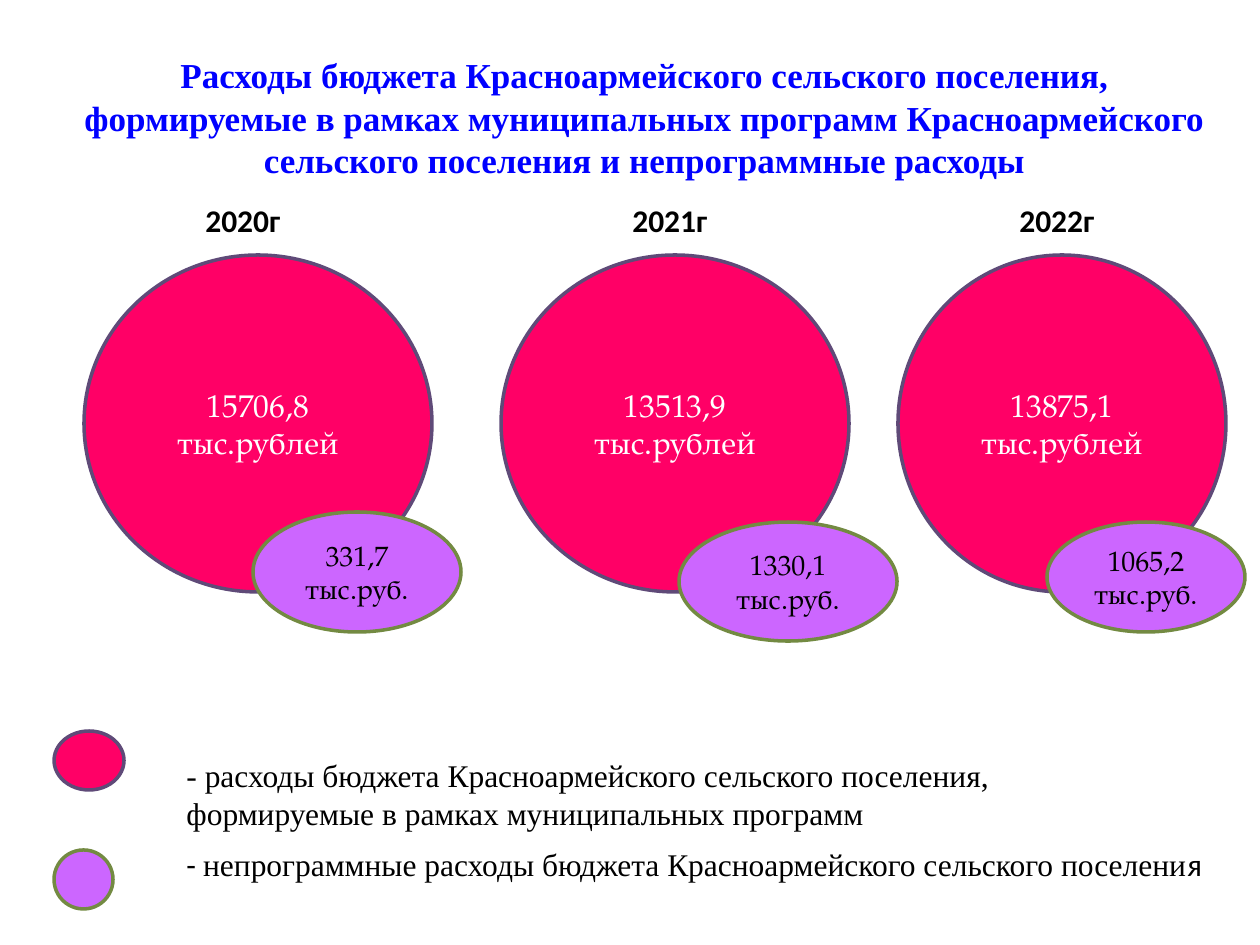
import pptx
import pptx.util
import pptx.dml.color
import pptx.enum.shapes
import pptx.enum.text

RGBColor = pptx.dml.color.RGBColor
ALIGN = pptx.enum.text.PP_ALIGN
MIDDLE = pptx.enum.text.MSO_ANCHOR.MIDDLE
PINK = RGBColor(0xFF, 0x00, 0x66)
PLUM = RGBColor(0x5F, 0x4A, 0x78)
VIOLET = RGBColor(0xCC, 0x66, 0xFF)
OLIVE = RGBColor(0x73, 0x8A, 0x42)
BLUE = RGBColor(0x00, 0x00, 0xFF)
WHITE = RGBColor(0xFF, 0xFF, 0xFF)
BLACK = RGBColor(0x00, 0x00, 0x00)
SERIF, SANS, PAGELLA = "Times New Roman", "Calibri", "TeX Gyre Pagella"
PROGRAM, OTHER = (PINK, PLUM), (VIOLET, OLIVE)


def emu(*px):
    """Turn px lengths into EMU at 126 px to the inch."""
    return [pptx.util.Emu(round(v * 914400 / 126)) for v in px]


def style(p, name, size, color, bold=False, align=None):
    """Set the font and alignment of a paragraph."""
    p.font.name, p.font.size, p.font.bold = name, pptx.util.Pt(size), bold
    p.font.color.rgb = color
    p.alignment = align


def add_ellipse(s, box, colors, text="", size=18, color=WHITE):
    """Draw an outlined ellipse with optional centred text."""
    sp = s.shapes.add_shape(pptx.enum.shapes.MSO_SHAPE.OVAL, *emu(*box))
    sp.shadow.inherit = False
    sp.fill.solid()
    sp.fill.fore_color.rgb, sp.line.color.rgb = colors
    sp.line.width = pptx.util.Pt(2)
    if text:
        tf = sp.text_frame
        tf.text = text
        tf.vertical_anchor = MIDDLE
        style(tf.paragraphs[0], PAGELLA, size, color, align=ALIGN.CENTER)


def add_label(s, box, text, name, bold=False):
    """Place a wrapped black text box and return its paragraph."""
    tf = s.shapes.add_textbox(*emu(*box)).text_frame
    tf.word_wrap = True
    tf.text = text
    p = tf.paragraphs[0]
    style(p, name, 18, BLACK, bold)
    return p


def add_title(s, box, text):
    """Move and format the title placeholder."""
    sp = s.shapes.title
    sp.left, sp.top, sp.width, sp.height = emu(*box)
    tf = sp.text_frame
    tf.text = text
    tf.vertical_anchor = MIDDLE
    style(tf.paragraphs[0], SERIF, 20, BLUE, True, ALIGN.CENTER)


def add_year(s, box, year, label_dx, program, other, other_box):
    """Draw one year: heading, programme circle and overlapping small ellipse."""
    x, y, w, h = box
    dx, dy, ow, oh = other_box
    add_label(s, (x + label_dx, y, 116, 50), year, SANS, True)
    add_ellipse(s, (x, y + 60, w, h - 60), PROGRAM, f"{program} тыс.рублей")
    add_ellipse(s, (x + dx, y + dy, ow, oh), OTHER, f"{other} тыс.руб.", 16, BLACK)


def add_legend(s, box):
    """Draw the two colour keys with their descriptions."""
    x, y, w, h = box
    add_ellipse(s, (x, y, 70, 59), PROGRAM)
    add_ellipse(s, (x, y + h - 59, 59, 59), OTHER)
    add_label(s, (x + 120, y + 19, w - 190, 89),
              "- расходы бюджета Красноармейского сельского поселения, "
              "формируемые в рамках муниципальных программ", SERIF)
    p = add_label(s, (x + 120, y + 108, w - 120, 50), "- ", SANS)
    r = p.add_run()
    r.text = "непрограммные расходы бюджета Красноармейского сельского поселени"
    r.font.name = SERIF
    p.add_run().text = "я"


def main():
    """Build and save the slide."""
    prs = pptx.Presentation()
    prs.slide_width, prs.slide_height = emu(1260, 945)
    s = prs.slides.add_slide(prs.slide_layouts[5])
    add_title(s, (63, 38, 1163, 158),
              "Расходы бюджета Красноармейского сельского поселения, "
              "формируемые в рамках муниципальных программ Красноармейского "
              "сельского поселения и непрограммные расходы")
    years = [
        (84, 348, "2020г", 109, "15706,8", "331,7", (169, 317, 208, 120)),
        (501, 348, "2021г", 119, "13513,9", "1330,1", (178, 327, 218, 119)),
        (898, 328, "2022г", 109, "13875,1", "1065,2", (149, 327, 198, 110)),
    ]
    for x, w, *data in years:
        add_year(s, (x, 195, w, 397), *data)
    add_legend(s, (54, 731, 1192, 178))
    prs.save("out.pptx")


if __name__ == "__main__":
    main()
